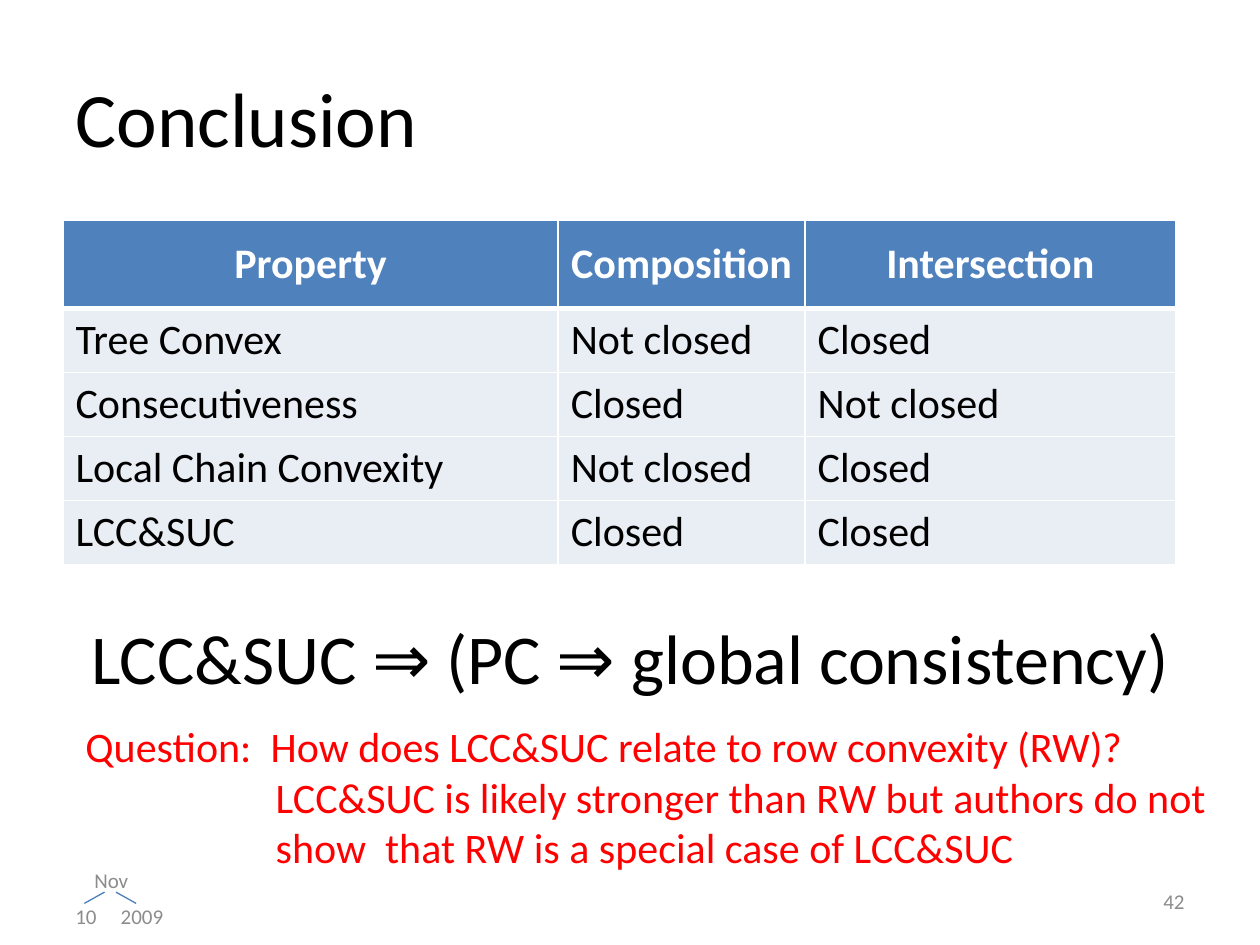
"""Build the conclusion slide with its closure table and open question."""
from dataclasses import dataclass

from lxml import etree
from pptx import Presentation
from pptx.dml.color import RGBColor
from pptx.enum.shapes import MSO_CONNECTOR
from pptx.enum.text import MSO_ANCHOR, PP_ALIGN
from pptx.oxml.ns import qn
from pptx.util import Inches, Pt

LEFT, CENTER, RIGHT = PP_ALIGN.LEFT, PP_ALIGN.CENTER, PP_ALIGN.RIGHT
TOP, MIDDLE = MSO_ANCHOR.TOP, MSO_ANCHOR.MIDDLE
STRAIGHT = MSO_CONNECTOR.STRAIGHT


@dataclass(frozen=True)
class Theme:
    font: str = "Calibri"
    black: str = "000000"
    white: str = "FFFFFF"
    gray: str = "8C8C8C"
    red: str = "FF0000"
    header: str = "4F81BD"
    band: str = "E9EDF4"
    branch: str = "4B7EBC"
    title_size: int = 44
    claim_size: int = 40
    body_size: int = 24
    footer_size: int = 12


theme = Theme()


def write(frame, lines, size, color, align=LEFT, anchor=TOP, bold=False):
    frame.word_wrap = True
    frame.vertical_anchor = anchor
    for index, line in enumerate(lines):
        para = frame.paragraphs[0] if index == 0 else frame.add_paragraph()
        para.alignment = align
        span = para.add_run()
        span.text = line
        formats = {"name": theme.font, "size": Pt(size), "bold": bold}
        for name, value in formats.items():
            setattr(span.font, name, value)
        span.font.color.rgb = RGBColor.from_string(color)


def set_indent(para, margin, first=0):
    properties = para._p.get_or_add_pPr()
    properties.set("marL", str(Inches(margin)))
    properties.set("indent", str(Inches(first)))


deck = Presentation()
deck.slide_width, deck.slide_height = Inches(10), Inches(7.5)
page = deck.slides.add_slide(deck.slide_layouts[5])

title = page.shapes.title
place = {"left": 0.5, "top": 0.3, "width": 9, "height": 1.25}
for name, value in place.items():
    setattr(title, name, Inches(value))
write(title.text_frame, ["Conclusion"], theme.title_size, theme.black, anchor=MIDDLE)

rows = [
    ("Property", "Composition", "Intersection"),
    ("Tree Convex", "Not closed", "Closed"),
    ("Consecutiveness", "Closed", "Not closed"),
    ("Local Chain Convexity", "Not closed", "Closed"),
    ("LCC&SUC", "Closed", "Closed"),
]
column_widths = [3.93, 1.96, 2.94]
row_heights = [0.7] + [0.5] * 4
table = page.shapes.add_table(
    len(rows), len(column_widths), Inches(0.5), Inches(1.75),
    Inches(sum(column_widths)), Inches(sum(row_heights)),
).table
for column, width in zip(table.columns, column_widths):
    column.width = Inches(width)
for row_index, (labels, height) in enumerate(zip(rows, row_heights)):
    table.rows[row_index].height = Inches(height)
    is_header = row_index == 0
    for column_index, label in enumerate(labels):
        cell = table.cell(row_index, column_index)
        write(
            cell.text_frame, [label], theme.body_size,
            theme.white if is_header else theme.black,
            align=CENTER if is_header else LEFT, bold=is_header,
        )
        cell.vertical_anchor = MIDDLE if is_header else TOP
        borders = {"lnL": 1, "lnR": 1, "lnT": 3 if row_index == 1 else 1,
                   "lnB": 3 if is_header else 1}
        for side, points in borders.items():
            border = etree.SubElement(
                cell._tc.get_or_add_tcPr(), qn(f"a:{side}"), w=str(Pt(points)))
            fill = etree.SubElement(border, qn("a:solidFill"))
            etree.SubElement(fill, qn("a:srgbClr"), val=theme.white)
        cell.fill.solid()
        cell.fill.fore_color.rgb = RGBColor.from_string(
            theme.header if is_header else theme.band)

texts = [
    ((0.5, 6.93, 2.33, 0.4), ["Nov", "10\t2009"],
     theme.footer_size, theme.gray, LEFT, MIDDLE),
    ((7.17, 6.95, 2.33, 0.4), ["42"],
     theme.footer_size, theme.gray, RIGHT, MIDDLE),
    ((0, 4.83, 10, 0.77), ["LCC&SUC ⇒ (PC ⇒ global consistency)"],
     theme.claim_size, theme.black, CENTER, TOP),
    ((0.58, 5.67, 9.42, 1.31),
     ["Question:\tHow does LCC&SUC relate to row convexity (RW)?",
      "LCC&SUC is likely stronger than RW but authors do not",
      "show  that RW is a special case of LCC&SUC"],
     theme.body_size, theme.red, LEFT, TOP),
]
frames = []
for bounds, lines, size, color, align, anchor in texts:
    box = page.shapes.add_textbox(*map(Inches, bounds))
    write(box.text_frame, lines, size, color, align, anchor)
    frames.append(box.text_frame)
date, number, claim, inquiry = frames

month, day_year = date.paragraphs
set_indent(month, 0.15)
set_indent(day_year, 0.36, first=-0.36)
for para in (month, day_year):
    para.space_after = Pt(6)

question, *answers = inquiry.paragraphs
set_indent(question, 1.47, first=-1.47)
for para in answers:
    set_indent(para, 1.51)

for ends in [(0.67, 7.17, 0.83, 7.08), (0.92, 7.08, 1.08, 7.17)]:
    branch = page.shapes.add_connector(STRAIGHT, *map(Inches, ends))
    branch.line.color.rgb = RGBColor.from_string(theme.branch)
    branch.line.width = Pt(0.75)
    etree.SubElement(branch._element.spPr, qn("a:effectLst"))

deck.save("out.pptx")
